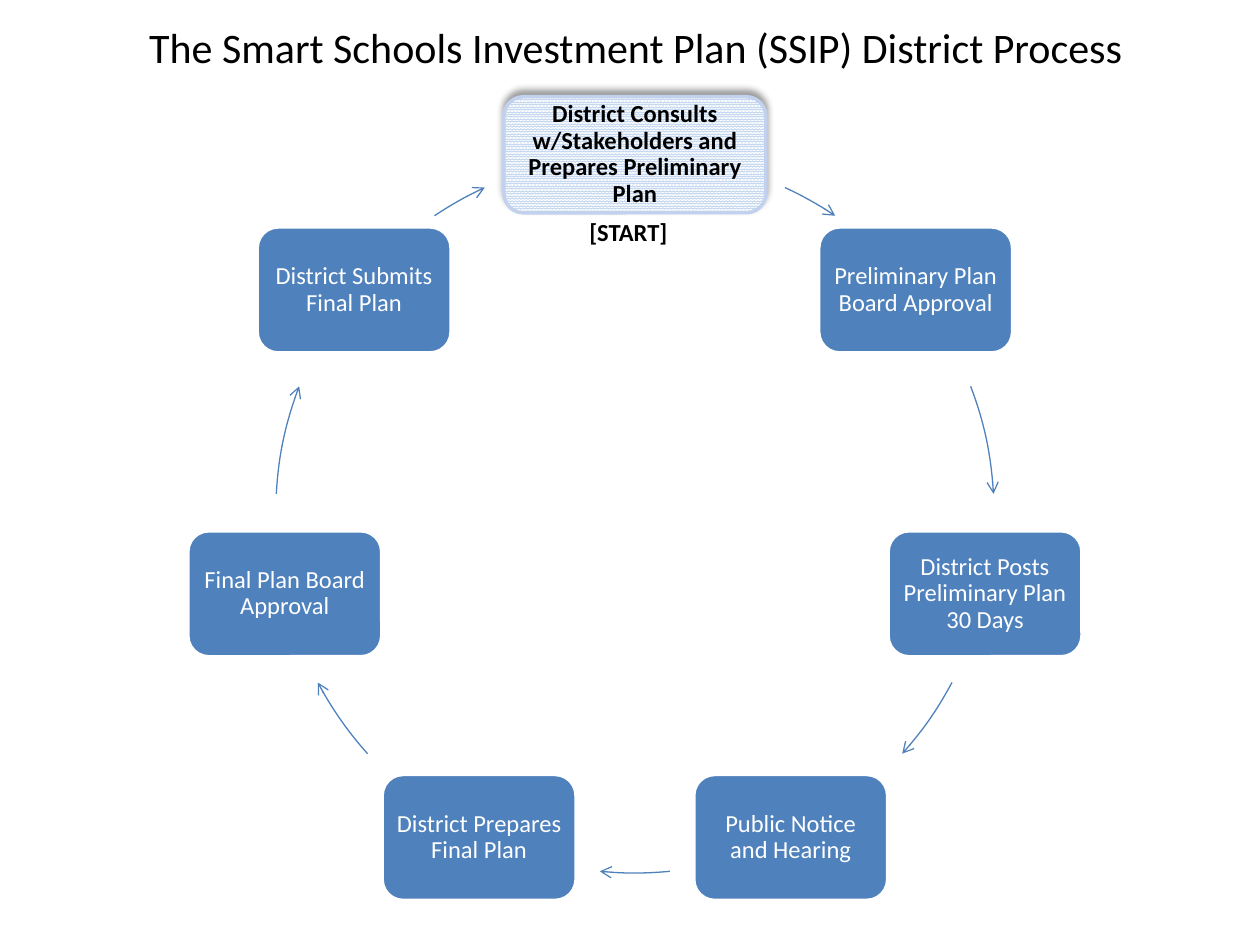
import math
from dataclasses import dataclass

import pptx
import pptx.dml.color
import pptx.enum.dml
import pptx.enum.shapes
import pptx.enum.text
import pptx.oxml
import pptx.oxml.ns
import pptx.util
from pptx.dml.color import RGBColor
from pptx.util import Cm

BLACK = RGBColor(0x00, 0x00, 0x00)
WHITE = RGBColor(0xFF, 0xFF, 0xFF)
BLUE = RGBColor(0x4F, 0x81, 0xBD)
PALE_BLUE = RGBColor(0xC6, 0xD9, 0xF1)
BORDER_BLUE = RGBColor(0xC2, 0xD1, 0xED)

FONT = "Calibri"
CENTER_X, CENTER_Y, RADIUS = 12.8, 10.36, 7.24
DRAWING_NAMESPACE = pptx.oxml.ns.nsdecls("a")


@dataclass(frozen=True)
class Step:
    text: str
    arrow_start: float
    arrow_end: float
    width: float = 3.91
    height: float = 2.54
    is_start: bool = False


STEPS = [
    Step("District Consults w/Stakeholders and Prepares Preliminary Plan",
         24.7, 33.9, 5.28, 2.34, True),
    Step("Preliminary Plan Board Approval", 69.2, 86.8),
    Step("District Posts Preliminary Plan 30 Days", 118, 131.9),
    Step("Public Notice and Hearing", 174.4, 185.6),
    Step("District Prepares Final Plan", 228.1, 242),
    Step("Final Plan Board Approval", 273.2, 290.8),
    Step("District Submits Final Plan", 326.1, 335.3),
]


def write_text(text_frame, text: str, size: float, color: RGBColor,
               bold: bool = False, centered: bool = True):
    text_frame.word_wrap = True
    text_frame.vertical_anchor = pptx.enum.text.MSO_ANCHOR.MIDDLE
    paragraph = text_frame.paragraphs[0]
    alignment = pptx.enum.text.PP_ALIGN
    paragraph.alignment = alignment.CENTER if centered else alignment.LEFT
    run = paragraph.add_run()
    run.text = text
    run.font.name = FONT
    run.font.size = pptx.util.Pt(size)
    run.font.bold = bold
    run.font.color.rgb = color
    return paragraph


def style_start_box(shape) -> None:
    shape.fill.patterned()
    shape.fill.pattern = pptx.enum.dml.MSO_PATTERN.PERCENT_90
    shape.fill.fore_color.rgb = PALE_BLUE
    shape.fill.back_color.rgb = WHITE
    shape.line.color.rgb = BORDER_BLUE
    effects = shape._element.spPr.find(pptx.oxml.ns.qn("a:effectLst"))
    effects.append(pptx.oxml.parse_xml(
        f'<a:outerShdw {DRAWING_NAMESPACE} blurRad="50800" dist="38100" '
        'dir="16200000" rotWithShape="0"><a:srgbClr val="000000">'
        '<a:alpha val="40000"/></a:srgbClr></a:outerShdw>'))


def draw_box(slide, step: Step, angle: float) -> None:
    x = CENTER_X + RADIUS * math.sin(math.radians(angle))
    y = CENTER_Y - RADIUS * math.cos(math.radians(angle))
    shape = slide.shapes.add_shape(
        pptx.enum.shapes.MSO_SHAPE.ROUNDED_RECTANGLE,
        Cm(x - step.width / 2), Cm(y - step.height / 2),
        Cm(step.width), Cm(step.height))
    shape.shadow.inherit = False
    shape.line.width = pptx.util.Pt(2)
    if step.is_start:
        style_start_box(shape)
    else:
        shape.fill.solid()
        shape.fill.fore_color.rgb = BLUE
        shape.line.color.rgb = WHITE
    text_frame = shape.text_frame
    text_frame.margin_left = text_frame.margin_right = Cm(0.15)
    text_frame.margin_top = text_frame.margin_bottom = Cm(0.15)
    paragraph = write_text(text_frame, step.text, 14,
                           BLACK if step.is_start else WHITE, step.is_start)
    paragraph.line_spacing = 0.9


def draw_arrow(slide, start: float, end: float) -> None:
    arc = slide.shapes.add_shape(
        pptx.enum.shapes.MSO_SHAPE.ARC,
        Cm(CENTER_X - RADIUS), Cm(CENTER_Y - RADIUS),
        Cm(2 * RADIUS), Cm(2 * RADIUS))
    for index, angle in enumerate((start, end)):
        arc.adjustments[index] = (angle - 90) % 360 * 0.6
    arc.shadow.inherit = False
    arc.fill.background()
    arc.line.color.rgb = BLUE
    arc.line.width = pptx.util.Pt(0.75)
    arc.line._get_or_add_ln().append(pptx.oxml.parse_xml(
        f'<a:tailEnd {DRAWING_NAMESPACE} type="arrow"/>'))


def main() -> None:
    presentation = pptx.Presentation()
    presentation.slide_width = Cm(25.4)
    presentation.slide_height = Cm(19.05)
    slide = presentation.slides.add_slide(presentation.slide_layouts[5])

    title = slide.shapes.title
    title.left, title.top = Cm(1.07), Cm(0.2)
    title.width, title.height = Cm(23.5), Cm(1.47)
    title.text_frame.auto_size = pptx.enum.text.MSO_AUTO_SIZE.NONE
    write_text(title.text_frame,
               "The Smart Schools Investment Plan (SSIP) District Process",
               24, BLACK)

    for index, step in enumerate(STEPS):
        draw_box(slide, step, index * 360 / len(STEPS))
        draw_arrow(slide, step.arrow_start, step.arrow_end)

    start_label = slide.shapes.add_textbox(
        Cm(11.63), Cm(4.24), Cm(2.34), Cm(0.86))
    write_text(start_label.text_frame, "[START]", 14, BLACK, True, False)

    presentation.save("out.pptx")


if __name__ == "__main__":
    main()
